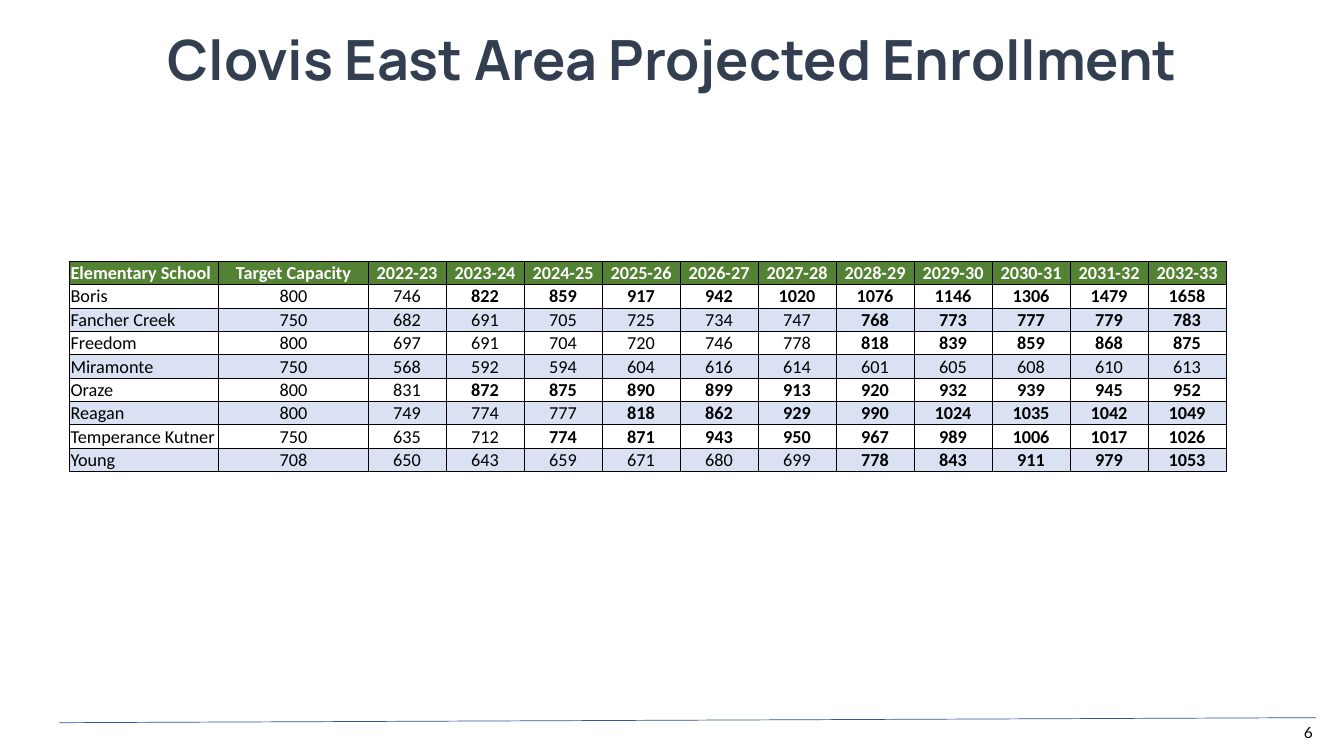
from dataclasses import dataclass

from lxml import etree
from pptx import Presentation
from pptx.dml.color import RGBColor
from pptx.enum.shapes import MSO_CONNECTOR
from pptx.enum.text import MSO_ANCHOR, MSO_AUTO_SIZE, PP_ALIGN
from pptx.oxml.ns import qn
from pptx.util import Inches, Pt

LEFT, CENTER, RIGHT = PP_ALIGN.LEFT, PP_ALIGN.CENTER, PP_ALIGN.RIGHT
MIDDLE, BOTTOM = MSO_ANCHOR.MIDDLE, MSO_ANCHOR.BOTTOM
STRAIGHT = MSO_CONNECTOR.STRAIGHT
NO_AUTOFIT = MSO_AUTO_SIZE.NONE

NAVY, BLACK, WHITE = "333F50", "000000", "FFFFFF"
GREEN, PALE_BLUE, RULE_BLUE = "548235", "D9E1F2", "2F5597"


@dataclass
class School:
    name: str
    capacity: int
    enrollment: list[int]


FIRST_YEAR = 2022
SCHOOLS = [
    School("Boris", 800, [746, 822, 859, 917, 942, 1020, 1076, 1146, 1306, 1479, 1658]),
    School("Fancher Creek", 750, [682, 691, 705, 725, 734, 747, 768, 773, 777, 779, 783]),
    School("Freedom", 800, [697, 691, 704, 720, 746, 778, 818, 839, 859, 868, 875]),
    School("Miramonte", 750, [568, 592, 594, 604, 616, 614, 601, 605, 608, 610, 613]),
    School("Oraze", 800, [831, 872, 875, 890, 899, 913, 920, 932, 939, 945, 952]),
    School("Reagan", 800, [749, 774, 777, 818, 862, 929, 990, 1024, 1035, 1042, 1049]),
    School("Temperance Kutner", 750, [635, 712, 774, 871, 943, 950, 967, 989, 1006, 1017, 1026]),
    School("Young", 708, [650, 643, 659, 671, 680, 699, 778, 843, 911, 979, 1053]),
]
YEARS = len(SCHOOLS[0].enrollment)
TABLE_W, TABLE_H, LABEL_W = 11.47, 2.09, 1.48


def rgb(color: str) -> RGBColor:
    return RGBColor.from_string(color)


def write(tf, text: str, font: str, size: float, color: str, align, bold: bool = False) -> None:
    p = tf.paragraphs[0]
    p.alignment = align
    r = p.add_run()
    r.text = text
    r.font.name, r.font.size, r.font.bold = font, Pt(size), bold
    r.font.color.rgb = rgb(color)


def add_borders(cell, color: str, width: float) -> None:
    """Put the four edges ahead of the fill, as the schema requires."""
    tc_pr = cell._tc.get_or_add_tcPr()
    for i, edge in enumerate(("a:lnL", "a:lnR", "a:lnT", "a:lnB")):
        ln = etree.Element(qn(edge), w=str(Pt(width)))
        fill = etree.SubElement(ln, qn("a:solidFill"))
        etree.SubElement(fill, qn("a:srgbClr"), val=color)
        tc_pr.insert(i, ln)


def fill_cell(cell, text: str, align, color: str, bold: bool, fill: str | None) -> None:
    cell.vertical_anchor = BOTTOM
    cell.margin_left = cell.margin_right = cell.margin_top = Inches(0.01)
    cell.margin_bottom = 0
    if fill:
        cell.fill.solid()
        cell.fill.fore_color.rgb = rgb(fill)
    else:
        cell.fill.background()
    add_borders(cell, BLACK, 0.5)
    write(cell.text_frame, text, "Calibri", 13, color, align, bold)


def add_enrollment_table(slide) -> None:
    rows, cols = len(SCHOOLS) + 1, YEARS + 2
    table = slide.shapes.add_table(
        rows, cols, Inches(0.69), Inches(2.59), Inches(TABLE_W), Inches(TABLE_H)).table
    table.horz_banding = False
    for i, column in enumerate(table.columns):
        column.width = Inches(LABEL_W if i < 2 else (TABLE_W - 2 * LABEL_W) / YEARS)
    for row in table.rows:
        row.height = Inches(TABLE_H / rows)

    # Header row
    years = [f"{y}-{(y + 1) % 100}" for y in range(FIRST_YEAR, FIRST_YEAR + YEARS)]
    for c, text in enumerate(["Elementary School", "Target Capacity", *years]):
        fill_cell(table.cell(0, c), text, CENTER if c else LEFT, WHITE, True, GREEN)

    # School rows: projections above capacity are bold
    for n, school in enumerate(SCHOOLS, start=1):
        fill = None if n % 2 else PALE_BLUE
        for c, value in enumerate([school.name, school.capacity, *school.enrollment]):
            bold = c > 2 and value > school.capacity
            fill_cell(table.cell(n, c), str(value), CENTER if c else LEFT, BLACK, bold, fill)


def add_footer(slide) -> None:
    number = slide.shapes.add_textbox(Inches(12.56), Inches(7.12), Inches(0.56), Inches(0.33))
    number.text_frame.word_wrap = True
    write(number.text_frame, "6", "Lato", 11, BLACK, RIGHT)

    rule = slide.shapes.add_connector(
        STRAIGHT, Inches(0.59), Inches(7.17), Inches(13.05), Inches(7.12))
    rule.line.color.rgb = rgb(RULE_BLUE)
    rule.line.width = Pt(0.5)
    etree.SubElement(rule._element.spPr, qn("a:effectLst"))


def add_title(slide, text: str) -> None:
    title = slide.shapes.title
    title.left, title.top = Inches(0.92), Inches(0.34)
    title.width, title.height = Inches(11.5), Inches(0.57)
    tf = title.text_frame
    tf.auto_size, tf.word_wrap, tf.vertical_anchor = NO_AUTOFIT, True, MIDDLE
    write(tf, text, "Manrope", 39.6, NAVY, CENTER, True)
    tf.paragraphs[0].line_spacing = 0.9


def main() -> None:
    prs = Presentation()
    prs.slide_width, prs.slide_height = Inches(13.33), Inches(7.5)
    slide = prs.slides.add_slide(prs.slide_layouts[5])
    add_footer(slide)
    add_title(slide, "Clovis East Area Projected Enrollment")
    add_enrollment_table(slide)
    prs.save("out.pptx")


if __name__ == "__main__":
    main()
